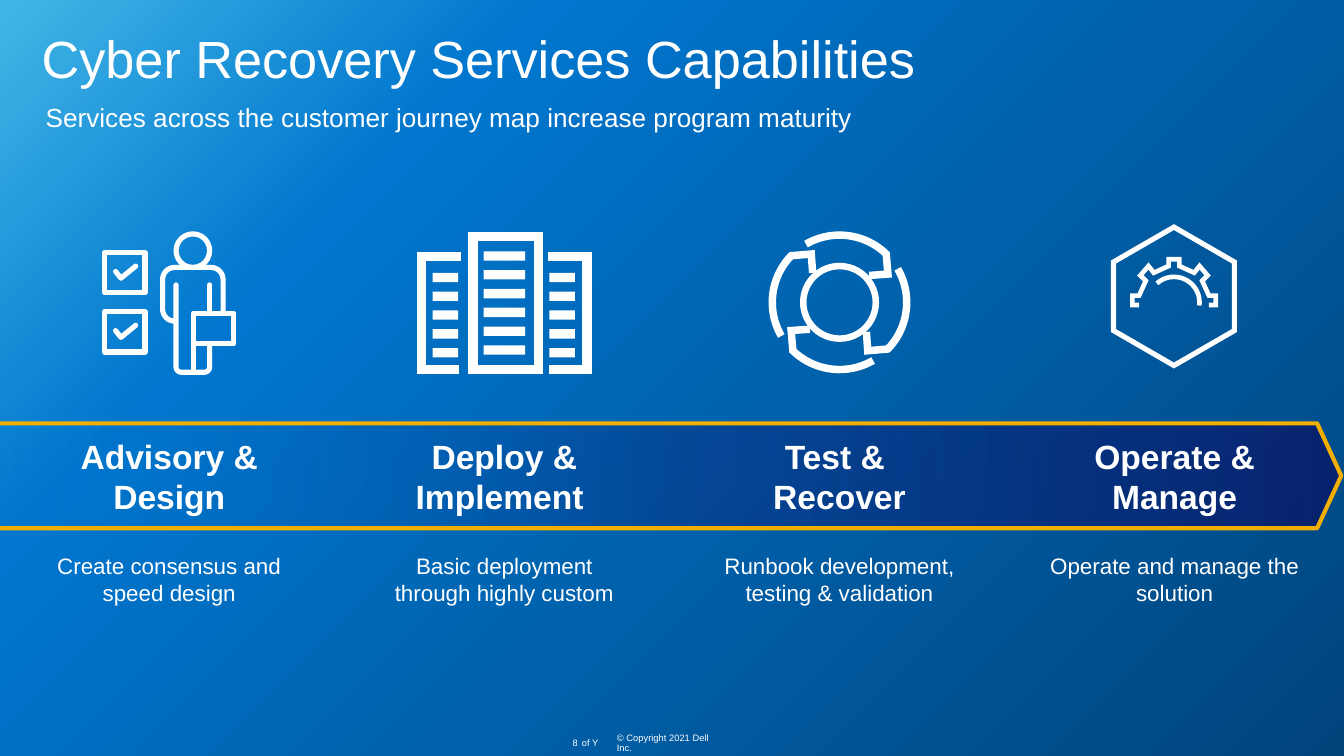
from math import cos, radians, sin

from lxml.etree import SubElement
from pptx import Presentation
from pptx.dml.color import RGBColor
from pptx.enum.shapes import MSO_SHAPE as Shape
from pptx.enum.text import MSO_ANCHOR as Anchor, PP_ALIGN as Align
from pptx.oxml.ns import qn
from pptx.util import Inches, Pt

COLORS = {
    "white": "FFFFFF",
    "gold": "F2AF00",
    "sky": "41B6E6",
    "blue": "0076CE",
    "navy": "00447C",
    "band_start": "0075CD",
    "band_middle": "082F82",
    "band_end": "0B1062",
}
COLUMN_WIDTH = 1.9
COLUMN_PITCH = 7.48 / 3


def color(name):
    return RGBColor.from_string(COLORS[name])


def set_gradient(fill, element, stops, angle):
    fill.gradient()
    gradient = element.find(".//" + qn("a:gradFill"))
    stop_list = gradient.find(qn("a:gsLst"))
    for stop in list(stop_list):
        stop_list.remove(stop)
    for position, name, opacity in stops:
        stop = SubElement(stop_list, qn("a:gs"), pos=str(position * 1000))
        tone = SubElement(stop, qn("a:srgbClr"), val=COLORS[name])
        if opacity < 100:
            SubElement(tone, qn("a:alpha"), val=str(opacity * 1000))
    gradient.find(qn("a:lin")).set("ang", str(angle * 60000))


def add_text(slide, box, text, size, bold=False, align=Align.LEFT,
             anchor=Anchor.TOP, spacing=1.0):
    frame = slide.shapes.add_textbox(*map(Inches, box)).text_frame
    frame.margin_left = frame.margin_right = 0
    frame.margin_top = frame.margin_bottom = 0
    frame.word_wrap = True
    frame.vertical_anchor = anchor
    paragraph = frame.paragraphs[0]
    paragraph.alignment = align
    paragraph.line_spacing = spacing
    for index, line in enumerate(text.split("\n")):
        if index:
            paragraph.add_line_break()
        run = paragraph.add_run()
        run.text = line
        run.font.name = "Arial"
        run.font.size = Pt(size)
        run.font.bold = bold
        run.font.color.rgb = color("white")


def style_outline(shape, width, rounded):
    shape.shadow.inherit = False
    shape.fill.background()
    shape.line.color.rgb = color("white")
    shape.line.width = Pt(width)
    line = shape.element.find(".//" + qn("a:ln"))
    if rounded:
        line.set("cap", "rnd")
        SubElement(line, qn("a:round"))
    else:
        SubElement(line, qn("a:miter"), lim="800000")


def add_stroke(shapes, left, top, points, width, closed=False, rounded=False):
    places = [(Inches(left + x), Inches(top + y)) for x, y in points]
    builder = shapes.build_freeform(*places[0])
    builder.add_line_segments(places[1:], close=closed)
    style_outline(builder.convert_to_shape(), width, rounded)


def add_outline(shapes, kind, box, width, rounded=False):
    shape = shapes.add_shape(kind, *map(Inches, box))
    style_outline(shape, width, rounded)


def arc(x, y, radius, start, end, steps=24):
    angles = [radians(start + (end - start) * i / steps) for i in range(steps + 1)]
    return [(x + radius * cos(a), y + radius * sin(a)) for a in angles]


def draw_consultant(shapes, left, top):
    width = 2.75
    add_outline(shapes, Shape.OVAL, (left + 0.55, top + 0.02, 0.25, 0.25), width)
    body = (arc(0.54, 0.58, 0.09, 90, 180, 8) + arc(0.54, 0.36, 0.09, 180, 270, 8)
            + arc(0.81, 0.36, 0.09, 270, 360, 8) + [(0.9, 0.6)])
    legs = ([(0.55, 0.4)] + arc(0.59, 1.01, 0.04, 180, 90, 6)
            + arc(0.76, 1.01, 0.04, 90, 0, 6) + [(0.8, 0.84)])
    strokes = [body, legs, [(0.8, 0.4), (0.8, 0.6)], [(0.68, 0.84), (0.68, 1.05)]]
    for offset in (0, 0.44):
        strokes.append([(0.1, 0.3 + offset), (0.14, 0.35 + offset), (0.25, 0.26 + offset)])
        add_outline(shapes, Shape.RECTANGLE,
                    (left + 0.02, top + 0.16 + offset, 0.3, 0.3), width, True)
    for points in strokes:
        add_stroke(shapes, left, top, points, width, rounded=True)
    add_outline(shapes, Shape.RECTANGLE, (left + 0.68, top + 0.61, 0.3, 0.23), width, True)


def add_windows(shapes, left, top, width, count):
    for index in range(count):
        window = shapes.add_shape(Shape.RECTANGLE, Inches(left), Inches(top + 0.14 * index),
                                  Inches(width), Inches(0.07))
        window.shadow.inherit = False
        window.fill.solid()
        window.fill.fore_color.rgb = color("white")
        window.line.fill.background()


def draw_towers(shapes, left, top):
    width = 5
    add_outline(shapes, Shape.RECTANGLE, (left + 0.42, top + 0.03, 0.49, 0.99), width)
    add_windows(shapes, left + 0.5, top + 0.14, 0.31, 6)
    wall = [(0.33, 0.18), (0.04, 0.18), (0.04, 1.02), (0.32, 1.02)]
    add_stroke(shapes, left, top, wall, width)
    add_stroke(shapes, left, top, [(1.31 - x, y) for x, y in wall], width)
    for window_left in (0.12, 0.99):
        add_windows(shapes, left + window_left, top + 0.3, 0.19, 5)


def draw_cycle(shapes, left, top):
    center = 0.53
    radius = 0.27
    corner = center - radius
    add_outline(shapes, Shape.OVAL,
                (left + corner, top + corner, 2 * radius, 2 * radius), 3.5)
    blade = arc(0, 0, 0.5, 240, 314) + [(0.36, -0.21), (0.22, -0.2)]
    for _ in range(4):
        add_stroke(shapes, left + center, top + center, blade, 4)
        blade = [(-y, x) for x, y in blade]


def draw_gear(shapes, left, top):
    middle = 0.46
    hexagon = [(0, 0.02), (0.45, 0.28), (0.45, 0.79),
               (0, 1.05), (-0.45, 0.79), (-0.45, 0.28)]
    half = [(0.04, 0.26), (0.04, 0.31), (0.15, 0.36), (0.19, 0.31),
            (0.25, 0.38), (0.21, 0.42), (0.26, 0.53), (0.31, 0.53),
            (0.31, 0.6), (0.26, 0.6)]
    teeth = [(-x, y) for x, y in reversed(half)] + half
    add_stroke(shapes, left + middle, top, hexagon, 2.75, closed=True)
    add_stroke(shapes, left + middle, top, teeth, 2.5)
    add_stroke(shapes, left + middle, top, arc(0, 0.58, 0.19, 228, 367), 2.5)


def add_heading(slide, left, top):
    add_text(slide, (left, top, 9.38, 0.42), "Cyber Recovery Services Capabilities",
             28, spacing=0.9)
    add_text(slide, (left + 0.03, top + 0.53, 9, 0.24),
             "Services across the customer journey map increase program maturity",
             14, spacing=0.9)


def add_band(slide, left, top, width, height):
    band = slide.shapes.add_shape(Shape.PENTAGON, *map(Inches, (left, top, width, height)))
    band.adjustments[0] = 0.23
    band.shadow.inherit = False
    set_gradient(band.fill, band.element,
                 [(0, "band_start", 0), (50, "band_middle", 50), (100, "band_end", 70)], 0)
    band.line.color.rgb = color("gold")
    band.line.width = Pt(2.25)


def add_stage(slide, left, top, name, summary, draw_icon, icon_width, icon_top):
    icon = slide.shapes.add_group_shape()
    draw_icon(icon.shapes, left + (COLUMN_WIDTH - icon_width) / 2, top + icon_top)
    add_text(slide, (left, top + 1.57, COLUMN_WIDTH, 0.61), name, 18, True, Align.CENTER)
    add_text(slide, (left, top + 2.44, COLUMN_WIDTH, 0.4), summary, 12, align=Align.CENTER)


def add_footer(slide, left, top):
    parts = [
        (0, 0.08, "8", Align.RIGHT),
        (0.11, 0.14, "of Y", Align.LEFT),
        (0.37, 0.81, "© Copyright 2021 Dell Inc.", Align.LEFT),
    ]
    for offset, width, text, align in parts:
        add_text(slide, (left + offset, top, width, 0.08), text, 5, align=align,
                 anchor=Anchor.MIDDLE, spacing=0.9)


def main():
    presentation = Presentation()
    presentation.slide_width = Inches(10)
    presentation.slide_height = Inches(10) * 9 // 16
    slide = presentation.slides.add_slide(presentation.slide_layouts[6])
    set_gradient(slide.background.fill, slide.element,
                 [(0, "sky", 100), (26, "blue", 100), (100, "navy", 100)], 45)
    add_footer(slide, 4.22, 5.49)
    add_heading(slide, 0.31, 0.25)
    add_band(slide, -0.02, 3.15, 10, 0.78)
    stages = [
        ("Advisory & Design", "Create consensus and speed design",
         draw_consultant, 1.0, 0.05),
        ("Deploy & Implement ", "Basic deployment through highly custom",
         draw_towers, 1.31, 0.06),
        ("Test & \nRecover", "Runbook development, testing & validation",
         draw_cycle, 1.06, 0.05),
        ("Operate & Manage", "Operate and manage the solution", draw_gear, 0.93, 0),
    ]
    for index, stage in enumerate(stages):
        add_stage(slide, 0.31 + COLUMN_PITCH * index, 1.67, *stage)
    presentation.save("out.pptx")


if __name__ == "__main__":
    main()
